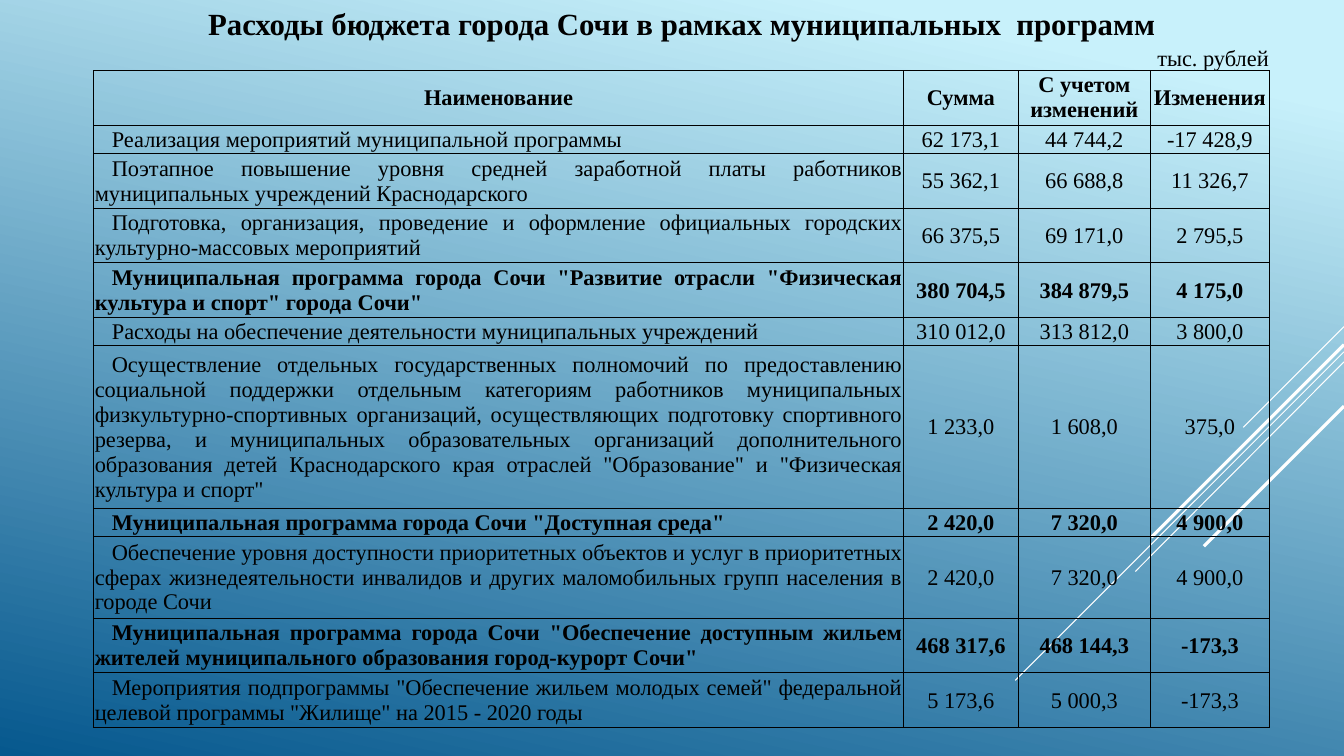
import pptx
import pptx.dml.color
import pptx.enum.shapes
import pptx.enum.text
import pptx.oxml
import pptx.oxml.ns
import pptx.util
from dataclasses import dataclass

Inches = pptx.util.Inches
Align = pptx.enum.text.PP_ALIGN
Anchor = pptx.enum.text.MSO_ANCHOR

FONT = "Times New Roman"
COLORS = {"text": "000000", "border": "000000", "streak": "FFFFFF",
          "sky": "C8F1FB", "sea": "06588E"}
SLIDE_W, SLIDE_H = 13.33, 7.5
TABLE_LEFT, TABLE_TOP = 0.93, 0.7
COL_WIDTHS = [8.03, 1.14, 1.31, 1.18]
ROW_HEIGHTS = {1: 0.28, 2: 0.54, 3: 0.81, 6: 1.61}  # by number of text lines
FIRST_LINE_INDENT = 0.17


@dataclass
class Streak:
    y_start: float
    x_end: float
    y_end: float
    width: float


@dataclass
class BudgetRow:
    name: str
    values: tuple[str, str, str]
    lines: int
    bold: bool = False


STREAKS = [
    Streak(3.24, 12.33, 4.24, 0.75),
    Streak(3.49, 10.07, 6.75, 0.75),
    Streak(3.59, 11.26, 5.67, 0.75),
    Streak(3.42, 11.42, 5.33, 2.25),
    Streak(4.03, 11.94, 5.42, 2.25),
]
HEADER = BudgetRow("Наименование", ("Сумма", "С учетом изменений", "Изменения"), 2, True)
ROWS = [
    BudgetRow("Реализация мероприятий муниципальной программы",
              ("62 173,1", "44 744,2", "-17 428,9"), 1),
    BudgetRow("Поэтапное повышение уровня средней заработной платы работников "
              "муниципальных учреждений Краснодарского",
              ("55 362,1", "66 688,8", "11 326,7"), 2),
    BudgetRow("Подготовка, организация, проведение и оформление официальных городских "
              "культурно-массовых мероприятий",
              ("66 375,5", "69 171,0", "2 795,5"), 2),
    BudgetRow('Муниципальная программа города Сочи "Развитие отрасли "Физическая '
              'культура и спорт" города Сочи"',
              ("380 704,5", "384 879,5", "4 175,0"), 2, True),
    BudgetRow("Расходы на обеспечение деятельности муниципальных учреждений",
              ("310 012,0", "313 812,0", "3 800,0"), 1),
    BudgetRow("Осуществление отдельных государственных полномочий по предоставлению "
              "социальной поддержки отдельным категориям работников муниципальных "
              "физкультурно-спортивных организаций, осуществляющих подготовку спортивного "
              "резерва, и муниципальных образовательных организаций дополнительного "
              'образования детей Краснодарского края отраслей "Образование" и "Физическая '
              'культура и спорт"',
              ("1 233,0", "1 608,0", "375,0"), 6),
    BudgetRow('Муниципальная программа города Сочи "Доступная среда"',
              ("2 420,0", "7 320,0", "4 900,0"), 1, True),
    BudgetRow("Обеспечение уровня доступности приоритетных объектов и услуг в приоритетных "
              "сферах жизнедеятельности инвалидов и других маломобильных групп населения в "
              "городе Сочи",
              ("2 420,0", "7 320,0", "4 900,0"), 3),
    BudgetRow('Муниципальная программа города Сочи "Обеспечение доступным жильем '
              'жителей муниципального образования город-курорт Сочи"',
              ("468 317,6", "468 144,3", "-173,3"), 2, True),
    BudgetRow('Мероприятия подпрограммы "Обеспечение жильем молодых семей" федеральной '
              'целевой программы "Жилище" на 2015 - 2020 годы',
              ("5 173,6", "5 000,3", "-173,3"), 2),
]


def rgb(name: str) -> pptx.dml.color.RGBColor:
    return pptx.dml.color.RGBColor.from_string(COLORS[name])


def write(tf, text: str, *, size: float = 16, bold: bool = False,
          align=Align.LEFT, indent: float = 0) -> None:
    p = tf.paragraphs[0]
    p.alignment = align
    if indent:
        p._p.get_or_add_pPr().set("indent", str(Inches(indent)))
    r = p.add_run()
    r.text = text
    r.font.name = FONT
    r.font.size = pptx.util.Pt(size)
    r.font.bold = bold
    r.font.color.rgb = rgb("text")


def paint_background(slide) -> None:
    fill = slide.background.fill
    fill.gradient()
    fill.gradient_angle = 258
    for stop, position, name in zip(fill.gradient_stops, (0.1, 1), ("sky", "sea")):
        stop.position = position
        stop.color.rgb = rgb(name)


def draw_streak(slide, streak: Streak) -> None:
    sp = slide.shapes.add_connector(
        pptx.enum.shapes.MSO_CONNECTOR.STRAIGHT, Inches(SLIDE_W), Inches(streak.y_start),
        Inches(streak.x_end), Inches(streak.y_end))
    sp.line.color.rgb = rgb("streak")
    sp.line.width = pptx.util.Pt(streak.width)
    sp._element.spPr.append(pptx.oxml.parse_xml(
        f'<a:effectLst {pptx.oxml.ns.nsdecls("a")}/>'))


def format_cell(cell, inset: float) -> None:
    cell.vertical_anchor = Anchor.MIDDLE
    cell.margin_left = cell.margin_right = cell.margin_top = Inches(inset)
    cell.margin_bottom = 0
    cell.fill.background()
    tc_pr = cell._tc.get_or_add_tcPr()
    for i, side in enumerate("LRTB"):
        tc_pr.insert(i, pptx.oxml.parse_xml(
            f'<a:ln{side} {pptx.oxml.ns.nsdecls("a")} w="{pptx.util.Pt(0.5)}"><a:solidFill>'
            f'<a:srgbClr val="{COLORS["border"]}"/></a:solidFill></a:ln{side}>'))


def draw_table(slide, rows: list[BudgetRow]) -> None:
    heights = [ROW_HEIGHTS[row.lines] for row in rows]
    table = slide.shapes.add_table(
        len(rows), len(COL_WIDTHS), Inches(TABLE_LEFT), Inches(TABLE_TOP),
        Inches(sum(COL_WIDTHS)), Inches(sum(heights))).table
    table.horz_banding = False
    for column, width in zip(table.columns, COL_WIDTHS):
        column.width = Inches(width)
    for i, (row, height) in enumerate(zip(rows, heights)):
        table.rows[i].height = Inches(height)
        for j, text in enumerate((row.name, *row.values)):
            cell = table.cell(i, j)
            format_cell(cell, 0.01 if i else 0)
            is_name = i > 0 and j == 0
            write(cell.text_frame, text, bold=row.bold,
                  align=Align.JUSTIFY if is_name else Align.CENTER,
                  indent=FIRST_LINE_INDENT if is_name else 0)


def main() -> None:
    prs = pptx.Presentation()
    prs.slide_width, prs.slide_height = Inches(SLIDE_W), Inches(SLIDE_H)
    slide = prs.slides.add_slide(prs.slide_layouts[5])

    # Background with diagonal streaks
    paint_background(slide)
    for streak in STREAKS:
        draw_streak(slide, streak)

    # Title
    title = slide.shapes.title
    title.left, title.top = Inches(1.95), Inches(0)
    title.width, title.height = Inches(9.62), Inches(0.47)
    tf = title.text_frame
    tf.auto_size = pptx.enum.text.MSO_AUTO_SIZE.NONE
    tf.vertical_anchor = Anchor.TOP
    write(tf, "Расходы бюджета города Сочи в рамках муниципальных  программ",
          size=22, bold=True, align=Align.CENTER)

    # Unit of measure
    unit = slide.shapes.add_textbox(Inches(11.38), Inches(0.39), Inches(1.51), Inches(0.37))
    unit.text_frame.word_wrap = True
    write(unit.text_frame, "тыс. рублей")

    # Budget table
    draw_table(slide, [HEADER, *ROWS])
    prs.save("out.pptx")


if __name__ == "__main__":
    main()
